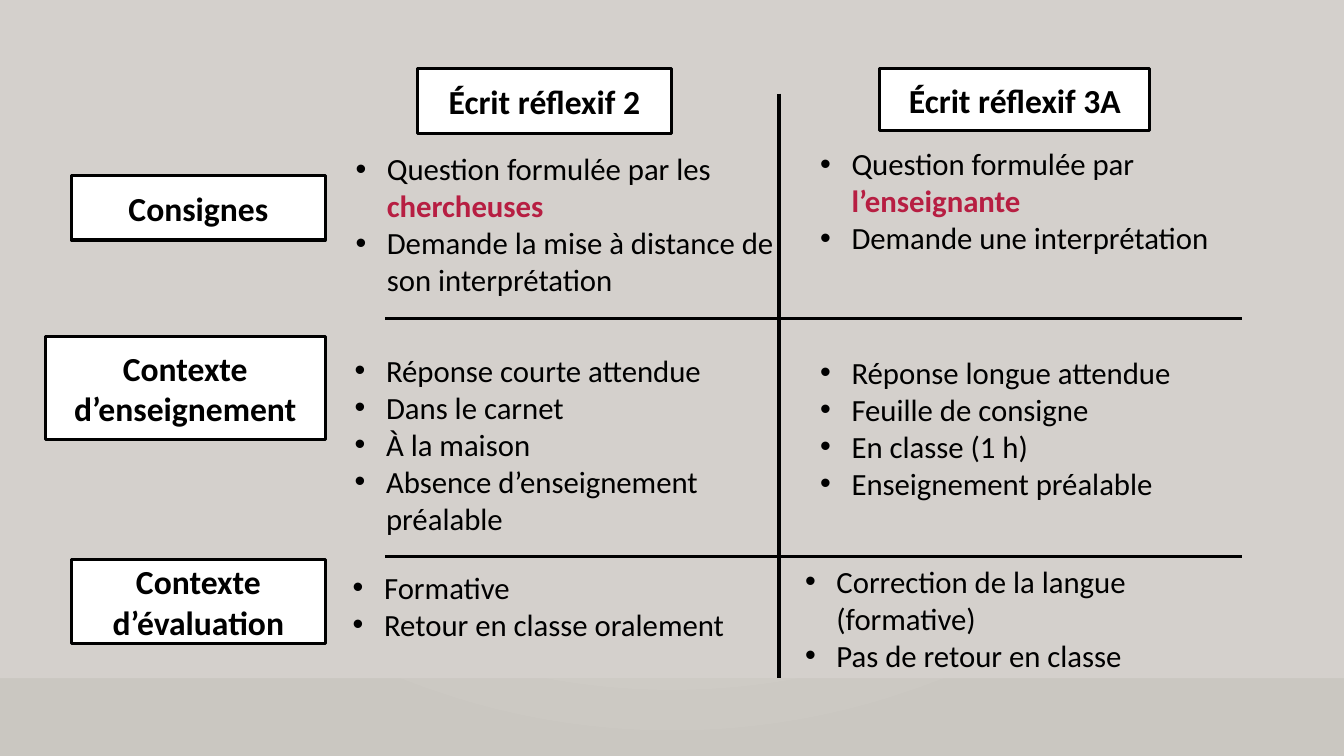
from dataclasses import dataclass

from pptx import Presentation
from pptx.dml.color import RGBColor
from pptx.enum.shapes import MSO_CONNECTOR, MSO_SHAPE
from pptx.enum.text import MSO_ANCHOR, MSO_AUTO_SIZE, PP_ALIGN
from pptx.oxml import parse_xml
from pptx.oxml.ns import nsdecls, qn
from pptx.oxml.xmlchemy import OxmlElement
from pptx.slide import Slide
from pptx.util import Cm, Pt

RECT = MSO_SHAPE.RECTANGLE
STRAIGHT = MSO_CONNECTOR.STRAIGHT
MIDDLE = MSO_ANCHOR.MIDDLE
CENTER = PP_ALIGN.CENTER
FIT_SHAPE = MSO_AUTO_SIZE.SHAPE_TO_FIT_TEXT

BLACK = RGBColor(0x00, 0x00, 0x00)
WHITE = RGBColor(0xFF, 0xFF, 0xFF)
CRIMSON = RGBColor(0xB7, 0x1E, 0x42)
PANEL = RGBColor(0xD4, 0xD0, 0xCC)
GLOW = RGBColor(0xEC, 0xEA, 0xE7)
EDGE = RGBColor(0xCA, 0xC7, 0xC1)

FONT = "Calibri"
SLIDE_W, SLIDE_H = 33.87, 19.05
PANEL_H = 17.09
LIST_W = 11.07
INDENT = 0.79
LINE_W = Pt(2.25)


@dataclass
class Label:
    text: str
    x: float
    y: float
    w: float = 6.4
    h: float = 1.63


@dataclass
class Item:
    text: str
    accent: str = ""


@dataclass
class BulletList:
    x: float
    y: float
    h: float
    items: list[Item]


@dataclass
class Rule:
    x1: float
    y1: float
    x2: float
    y2: float


LABELS = [
    Label("Consignes", 1.8, 4.42),
    Label("Contexte d’enseignement", 1.14, 8.48, 7.06, 2.59),
    Label("Contexte d’évaluation", 1.8, 14.1, h=2.11),
    Label("Écrit réflexif 2", 10.52, 1.73),
    Label("Écrit réflexif 3A", 22.17, 1.73, 6.81, 1.57),
]

RULES = [
    Rule(19.63, 2.36, 19.63, PANEL_H),
    Rule(31.29, 8.03, 9.7, 8.03),
    Rule(31.29, 14.02, 9.7, 14.02),
]

LISTS = [
    BulletList(8.71, 3.66, 4.01, [
        Item("Question formulée par les ", "chercheuses"),
        Item("Demande la mise à distance de son interprétation"),
    ]),
    BulletList(20.42, 3.53, 3.07, [
        Item("Question formulée par ", "l’enseignante"),
        Item("Demande une interprétation"),
    ]),
    BulletList(8.69, 8.74, 4.95, [
        Item("Réponse courte attendue"),
        Item("Dans le carnet"),
        Item("À la maison"),
        Item("Absence d’enseignement préalable"),
    ]),
    BulletList(20.42, 8.79, 4.01, [
        Item("Réponse longue attendue"),
        Item("Feuille de consigne"),
        Item("En classe (1 h)"),
        Item("Enseignement préalable"),
    ]),
    BulletList(8.64, 14.2, 2.13, [
        Item("Formative"),
        Item("Retour en classe oralement"),
    ]),
    BulletList(20.04, 14.05, 3.07, [
        Item("Correction de la langue (formative)"),
        Item("Pas de retour en classe"),
    ]),
]


def style_run(r, size: int, color: RGBColor, bold: bool) -> None:
    r.font.name = FONT
    r.font.size = Pt(size)
    r.font.color.rgb = color
    r.font.bold = bold


def draw_background(s: Slide) -> None:
    # Radial gradient centred on the top edge
    fill = s.background.fill
    fill.gradient()
    for stop, color, position in zip(fill.gradient_stops, (GLOW, EDGE), (0, 1)):
        stop.color.rgb = color
        stop.position = position
    grad = s.element.find(".//" + qn("a:gradFill"))
    lin = grad.find(qn("a:lin"))
    grad.replace(lin, parse_xml(
        f'<a:path {nsdecls("a")} path="circle">'
        '<a:fillToRect l="43000" t="0" r="43000" b="100000"/></a:path>'))

    # Plain panel above the bottom band
    sp = s.shapes.add_shape(RECT, 0, 0, Cm(SLIDE_W), Cm(PANEL_H))
    sp.shadow.inherit = False
    sp.fill.solid()
    sp.fill.fore_color.rgb = PANEL
    sp.line.fill.background()


def draw_label(s: Slide, label: Label) -> None:
    sp = s.shapes.add_shape(RECT, Cm(label.x), Cm(label.y), Cm(label.w), Cm(label.h))
    sp.shadow.inherit = False
    sp.fill.solid()
    sp.fill.fore_color.rgb = WHITE
    sp.line.color.rgb = BLACK
    sp.line.width = LINE_W
    tf = sp.text_frame
    tf.word_wrap = True
    tf.vertical_anchor = MIDDLE
    tf.text = label.text
    p = tf.paragraphs[0]
    p.alignment = CENTER
    style_run(p.runs[0], 24, BLACK, True)


def draw_rule(s: Slide, rule: Rule) -> None:
    line = s.shapes.add_connector(
        STRAIGHT, Cm(rule.x1), Cm(rule.y1), Cm(rule.x2), Cm(rule.y2))
    line.line.color.rgb = BLACK
    line.line.width = LINE_W
    line.element.spPr.append(OxmlElement("a:effectLst"))


def draw_list(s: Slide, bullets: BulletList) -> None:
    tb = s.shapes.add_textbox(Cm(bullets.x), Cm(bullets.y), Cm(LIST_W), Cm(bullets.h))
    tf = tb.text_frame
    tf.word_wrap = True
    tf.auto_size = FIT_SHAPE
    for i, item in enumerate(bullets.items):
        p = tf.add_paragraph() if i else tf.paragraphs[0]
        p.text = item.text
        style_run(p.runs[0], 22, BLACK, False)
        if item.accent:
            r = p.add_run()
            r.text = item.accent
            style_run(r, 22, CRIMSON, True)
        # Hanging bullet
        pPr = p._p.get_or_add_pPr()
        pPr.set("marL", str(Cm(INDENT)))
        pPr.set("indent", str(-Cm(INDENT)))
        pPr.append(parse_xml(f'<a:buFont {nsdecls("a")} typeface="Arial"/>'))
        pPr.append(parse_xml(f'<a:buChar {nsdecls("a")} char="•"/>'))


def main() -> None:
    prs = Presentation()
    prs.slide_width, prs.slide_height = Cm(SLIDE_W), Cm(SLIDE_H)
    s = prs.slides.add_slide(prs.slide_layouts[6])
    draw_background(s)
    for label in LABELS:
        draw_label(s, label)
    for rule in RULES:
        draw_rule(s, rule)
    for bullets in LISTS:
        draw_list(s, bullets)
    prs.save("out.pptx")


if __name__ == "__main__":
    main()
